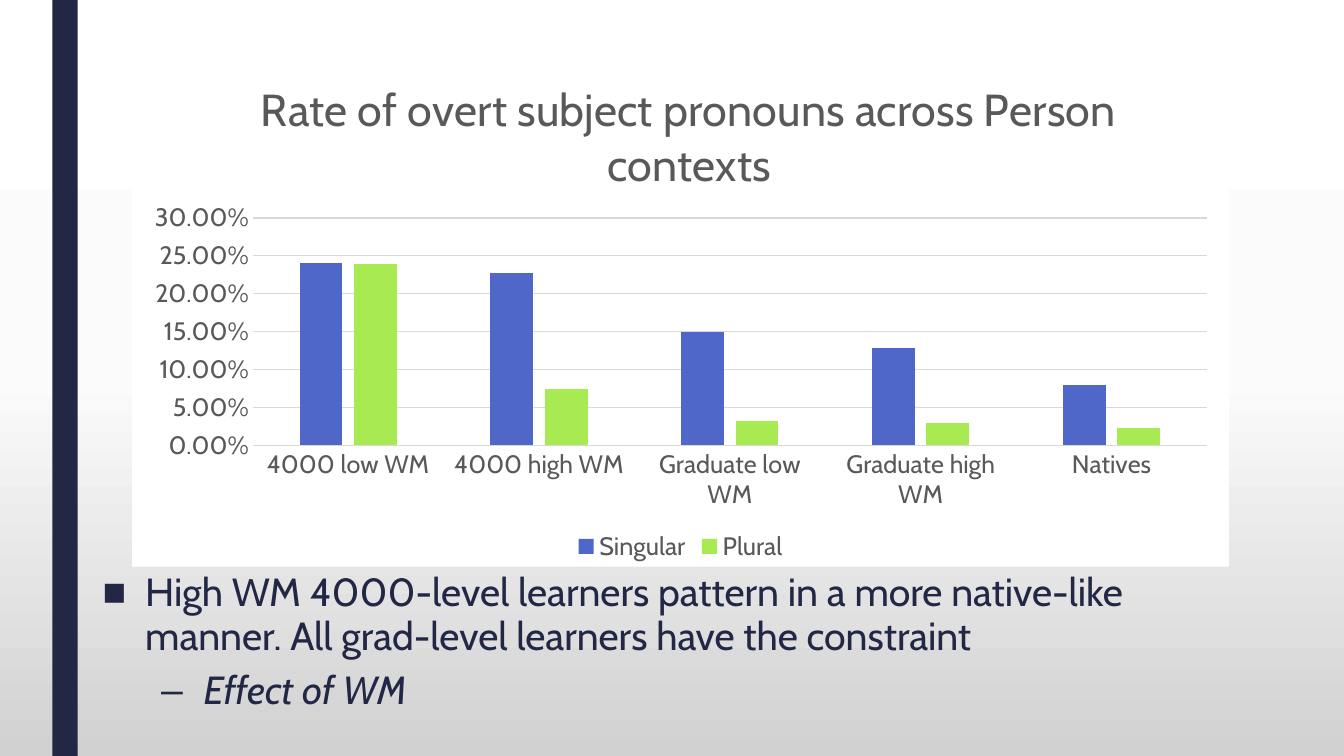
from copy import deepcopy
from dataclasses import dataclass

from lxml.etree import SubElement
from pptx import Presentation
from pptx.chart.data import CategoryChartData
from pptx.dml.color import RGBColor
from pptx.enum.chart import XL_CHART_TYPE, XL_LEGEND_POSITION, XL_TICK_MARK
from pptx.enum.shapes import MSO_SHAPE
from pptx.oxml import parse_xml
from pptx.oxml.ns import nsdecls, qn
from pptx.util import Cm, Pt


@dataclass(frozen=True)
class Theme:
    font: str = "Cabin"
    navy: str = "212745"
    gray: str = "595959"
    grid: str = "D9D9D9"
    white: str = "FFFFFF"
    series: tuple = ("4E67C8", "A7EA52")
    background: tuple = ((0, "FFFFFF"), (50, "FBFBFB"), (100, "D1D1D1"))
    title_size: int = 32
    label_size: int = 18
    body_size: int = 28


THEME = Theme()
TITLE = "Rate of overt subject pronouns across Person contexts"
GROUPS = ("4000 low WM", "4000 high WM", "Graduate low WM", "Graduate high WM", "Natives")
RATES = {
    "Singular": (0.24, 0.227, 0.15, 0.128, 0.08),
    "Plural": (0.239, 0.074, 0.032, 0.029, 0.022),
}


def color(value):
    return RGBColor.from_string(value)


def style_font(font, size, value):
    font.name = THEME.font
    font.size = Pt(size)
    font.color.rgb = color(value)
    font.bold = False


def set_background(slide):
    fill = slide.background.fill
    fill.gradient()
    fill.gradient_angle = 270
    stop_list = slide.background._cSld.find(".//" + qn("a:gsLst"))
    stop_list.insert(1, deepcopy(stop_list[0]))
    for stop, (position, value) in zip(fill.gradient_stops, THEME.background):
        stop.position = position / 100
        stop.color.rgb = color(value)


def add_side_bar(slide, height):
    bar = slide.shapes.add_shape(MSO_SHAPE.RECTANGLE, Cm(1.32), 0, Cm(0.64), height)
    bar.shadow.inherit = False
    bar.fill.solid()
    bar.fill.fore_color.rgb = color(THEME.navy)
    bar.line.fill.background()


def manual_layout(**settings):
    """Build a chart layout whose settings are fractions of the chart."""
    layout = parse_xml(f"<c:layout {nsdecls('c')}><c:manualLayout/></c:layout>")
    for name, value in settings.items():
        SubElement(layout[0], qn(f"c:{name}")).set("val", str(value))
    return layout


def style_axes(chart):
    for axis in (chart.category_axis, chart.value_axis):
        axis.major_tick_mark = XL_TICK_MARK.NONE
        axis.minor_tick_mark = XL_TICK_MARK.NONE
        style_font(axis.tick_labels.font, THEME.label_size, THEME.gray)
    value_axis = chart.value_axis
    value_axis.minimum_scale = 0
    value_axis.maximum_scale = 0.3
    value_axis.major_unit = 0.05
    value_axis.tick_labels.number_format = "0.00%"
    value_axis.tick_labels.number_format_is_linked = False
    value_axis.format.line.fill.background()
    for line in (chart.category_axis.format.line, value_axis.major_gridlines.format.line):
        line.color.rgb = color(THEME.grid)
        line.width = Pt(0.75)


def add_rate_chart(slide):
    data = CategoryChartData(number_format="0.00%")
    data.categories = GROUPS
    for name, values in RATES.items():
        data.add_series(name, values)
    chart = slide.shapes.add_chart(
        XL_CHART_TYPE.COLUMN_CLUSTERED, Cm(3.33), Cm(0.97), Cm(27.64), Cm(13.31), data
    ).chart
    style_font(chart.font, THEME.label_size, THEME.gray)
    style_axes(chart)

    # Columns
    plot = chart.plots[0]
    plot.gap_width = 219
    plot.overlap = -27
    plot.vary_by_categories = False
    for series, value in zip(plot.series, THEME.series):
        series.format.fill.solid()
        series.format.fill.fore_color.rgb = color(value)
        series.invert_if_negative = False

    # Title and legend
    title = chart.chart_title
    title.text_frame.text = TITLE
    style_font(title.text_frame.paragraphs[0].runs[0].font, THEME.title_size, THEME.gray)
    title.include_in_layout = False
    chart.has_legend = True
    chart.legend.position = XL_LEGEND_POSITION.BOTTOM
    chart.legend.include_in_layout = False
    style_font(chart.legend.font, THEME.label_size, THEME.gray)

    # Placement inside the chart, and its white ground
    chart_space = chart._chartSpace
    for tag, layout in (
        ("c:title", manual_layout(xMode="edge", yMode="edge", x=0.11, y=0.06)),
        ("c:plotArea", manual_layout(layoutTarget="inner", xMode="edge", yMode="edge",
                                     x=0.11, y=0.34, w=0.87, h=0.43)),
    ):
        parent = chart_space.find(".//" + qn(tag))
        for old_layout in parent.findall(qn("c:layout")):
            parent.remove(old_layout)
        parent.insert(1 if tag == "c:title" else 0, layout)
    chart_space.find(qn("c:chart")).addnext(parse_xml(
        f"<c:spPr {nsdecls('c', 'a')}><a:solidFill><a:srgbClr val='{THEME.white}'/>"
        "</a:solidFill><a:ln><a:noFill/></a:ln></c:spPr>"
    ))


def format_bullet(paragraph, symbol, level, indent, space_before, italic=False):
    paragraph.level = level
    paragraph.line_spacing = 0.94
    paragraph.space_before = Pt(space_before)
    paragraph.space_after = Pt(2)
    properties = paragraph._p.get_or_add_pPr()
    properties.set("marL", str(Cm(indent)))
    properties.set("indent", str(-Cm(1.07)))
    SubElement(properties, qn("a:buFont")).set("typeface", "Arial")
    SubElement(properties, qn("a:buChar")).set("char", symbol)
    font = paragraph.runs[0].font
    style_font(font, THEME.body_size, THEME.navy)
    font.italic = italic


def add_findings(slide):
    text_frame = slide.shapes.add_textbox(Cm(2.34), Cm(14.27), Cm(29.21), Cm(4.27)).text_frame
    text_frame.word_wrap = True
    text_frame.text = (
        "High WM 4000-level learners pattern in a more native-like manner. "
        "All grad-level learners have the constraint"
    )
    format_bullet(text_frame.paragraphs[0], "■", 0, 1.07, 10)
    effect = text_frame.add_paragraph()
    effect.text = "Effect of WM"
    format_bullet(effect, "–", 1, 2.54, 5, italic=True)


def main():
    presentation = Presentation()
    presentation.slide_width = Cm(33.87)
    presentation.slide_height = Cm(19.05)
    slide = presentation.slides.add_slide(presentation.slide_layouts[6])
    set_background(slide)
    add_side_bar(slide, presentation.slide_height)
    add_rate_chart(slide)
    add_findings(slide)
    presentation.save("out.pptx")


if __name__ == "__main__":
    main()
